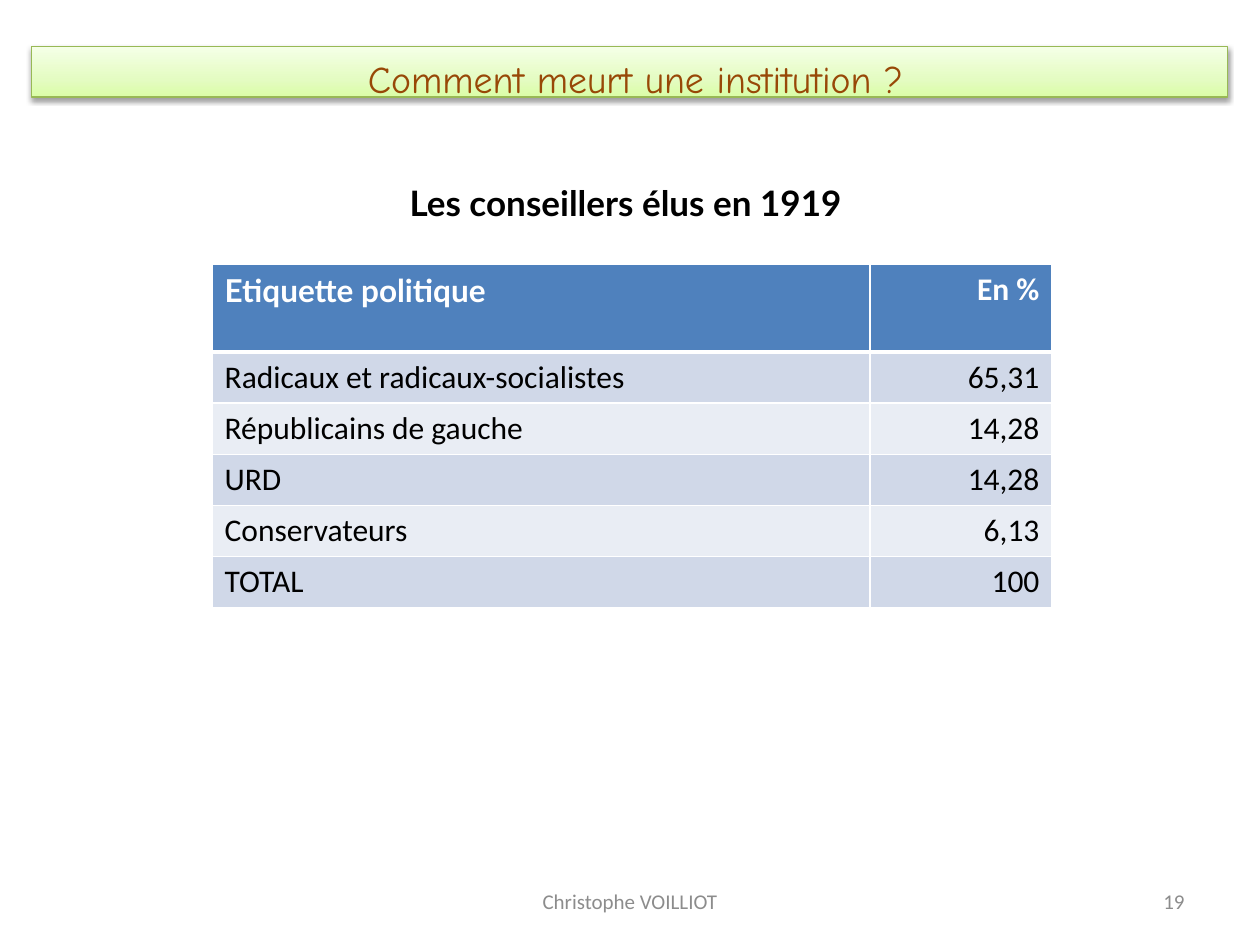
from dataclasses import dataclass

import pptx
import pptx.dml.color
import pptx.enum.text
import pptx.oxml
import pptx.oxml.ns
import pptx.util

Pt = pptx.util.Pt
ALIGN = pptx.enum.text.PP_ALIGN
ANCHOR = pptx.enum.text.MSO_ANCHOR

COLORS = {
    "title": "984807",
    "title_line": "98B955",
    "text": "000000",
    "footer": "8C8C8C",
    "white": "FFFFFF",
    "header": "4F81BD",
    "odd_row": "D0D8E8",
    "even_row": "E9EDF4",
}
TITLE_STOPS = ((0, "DAFDA7"), (35, "E4FCC2"), (100, "F5FFE7"))

COLUMN_WIDTHS = (376, 104)
HEADER_HEIGHT, ROW_HEIGHT = 50, 29.2
RESULTS = (
    ("Etiquette politique", "En %"),
    ("Radicaux et radicaux-socialistes", "65,31"),
    ("Républicains de gauche", "14,28"),
    ("URD", "14,28"),
    ("Conservateurs", "6,13"),
    ("TOTAL", "100"),
)


@dataclass(frozen=True)
class Caption:
    text: str
    box: tuple[float, float, float, float]
    size: float
    color: str
    align: ALIGN = ALIGN.CENTER
    anchor: ANCHOR = ANCHOR.MIDDLE
    font: str = "Calibri"
    bold: bool = False


TITLE = Caption(" Comment meurt une institution ?", (18, 26.6, 683.3, 28.8), 21.6,
                "title", anchor=ANCHOR.TOP, font="Comic Neue")
CAPTIONS = (
    Caption("Les conseillers élus en 1919 ", (36, 100, 648, 32), 20, "text",
            anchor=ANCHOR.TOP, font="Lato", bold=True),
    Caption("Christophe VOILLIOT", (246, 500.5, 228, 28.8), 12, "footer"),
    Caption("19", (516, 500.5, 168, 28.8), 12, "footer", ALIGN.RIGHT),
)


def rgb(name: str) -> pptx.dml.color.RGBColor:
    return pptx.dml.color.RGBColor.from_string(COLORS[name])


def set_attributes(target, values: dict) -> None:
    for attribute, value in values.items():
        setattr(target, attribute, value)


def write(frame, text: str, size: float, color: str, align, font: str, bold: bool) -> None:
    paragraph = frame.paragraphs[0]
    paragraph.alignment = align
    run = paragraph.add_run()
    run.text = text
    set_attributes(run.font, {"name": font, "size": Pt(size), "bold": bold})
    run.font.color.rgb = rgb(color)


def fill_caption(shape, caption: Caption) -> None:
    left, top, width, height = map(Pt, caption.box)
    set_attributes(shape, {"left": left, "top": top, "width": width, "height": height})
    frame = shape.text_frame
    set_attributes(frame, {
        "word_wrap": True,
        "auto_size": pptx.enum.text.MSO_AUTO_SIZE.NONE,
        "vertical_anchor": caption.anchor,
    })
    write(frame, caption.text, caption.size, caption.color, caption.align,
          caption.font, caption.bold)


def decorate_title(title) -> None:
    """Give the title band its three-stop gradient, outline and drop shadow."""
    namespace = pptx.oxml.ns.nsdecls("a")
    title.fill.gradient()
    title.fill.gradient_angle = 90
    stops = "".join(
        f'<a:gs pos="{position * 1000}"><a:srgbClr val="{color}"/></a:gs>'
        for position, color in TITLE_STOPS
    )
    properties = title.element.spPr
    old_stops = properties.find(".//" + pptx.oxml.ns.qn("a:gsLst"))
    old_stops.getparent().replace(
        old_stops, pptx.oxml.parse_xml(f"<a:gsLst {namespace}>{stops}</a:gsLst>"))
    title.line.color.rgb = rgb("title_line")
    title.line.width = Pt(0.75)
    title.shadow.inherit = False
    properties.find(pptx.oxml.ns.qn("a:effectLst")).append(pptx.oxml.parse_xml(
        f'<a:outerShdw {namespace} blurRad="{Pt(3.1)}" dist="{Pt(1.6)}" dir="5400000" '
        'rotWithShape="0"><a:srgbClr val="000000"><a:alpha val="38000"/>'
        '</a:srgbClr></a:outerShdw>'))


def set_borders(cell, widths: dict[str, float]) -> None:
    properties = cell._tc.get_or_add_tcPr()
    for position, (side, width) in enumerate(widths.items()):
        properties.insert(position, pptx.oxml.parse_xml(
            f'<a:ln{side} {pptx.oxml.ns.nsdecls("a")} w="{Pt(width)}"><a:solidFill>'
            f'<a:srgbClr val="{COLORS["white"]}"/></a:solidFill></a:ln{side}>'))


def add_results_table(slide) -> None:
    height = HEADER_HEIGHT + ROW_HEIGHT * (len(RESULTS) - 1)
    table = slide.shapes.add_table(
        len(RESULTS), len(COLUMN_WIDTHS), Pt(121.2), Pt(151.2),
        Pt(sum(COLUMN_WIDTHS)), Pt(height)).table
    for column, width in zip(table.columns, COLUMN_WIDTHS):
        column.width = Pt(width)
    for row_index, values in enumerate(RESULTS):
        is_header = row_index == 0
        table.rows[row_index].height = Pt(HEADER_HEIGHT if is_header else ROW_HEIGHT)
        band = "header" if is_header else ("even_row", "odd_row")[row_index % 2]
        borders = {"L": 1, "R": 1, "T": 3 if row_index == 1 else 1, "B": 3 if is_header else 1}
        for column_index, value in enumerate(values):
            cell = table.cell(row_index, column_index)
            cell.fill.solid()
            cell.fill.fore_color.rgb = rgb(band)
            set_borders(cell, borders)
            write(cell.text_frame, value, 18, "white" if is_header else "text",
                  (ALIGN.LEFT, ALIGN.RIGHT)[column_index],
                  "Lato" if is_header and column_index == 0 else "Calibri", is_header)


def main() -> None:
    presentation = pptx.Presentation()
    set_attributes(presentation, {"slide_width": Pt(720), "slide_height": Pt(540)})
    slide = presentation.slides.add_slide(presentation.slide_layouts[5])
    title = slide.shapes.title
    fill_caption(title, TITLE)
    title.text_frame.margin_top = Pt(5)
    decorate_title(title)
    for caption in CAPTIONS:
        fill_caption(slide.shapes.add_textbox(*map(Pt, caption.box)), caption)
    add_results_table(slide)
    presentation.save("out.pptx")


if __name__ == "__main__":
    main()
